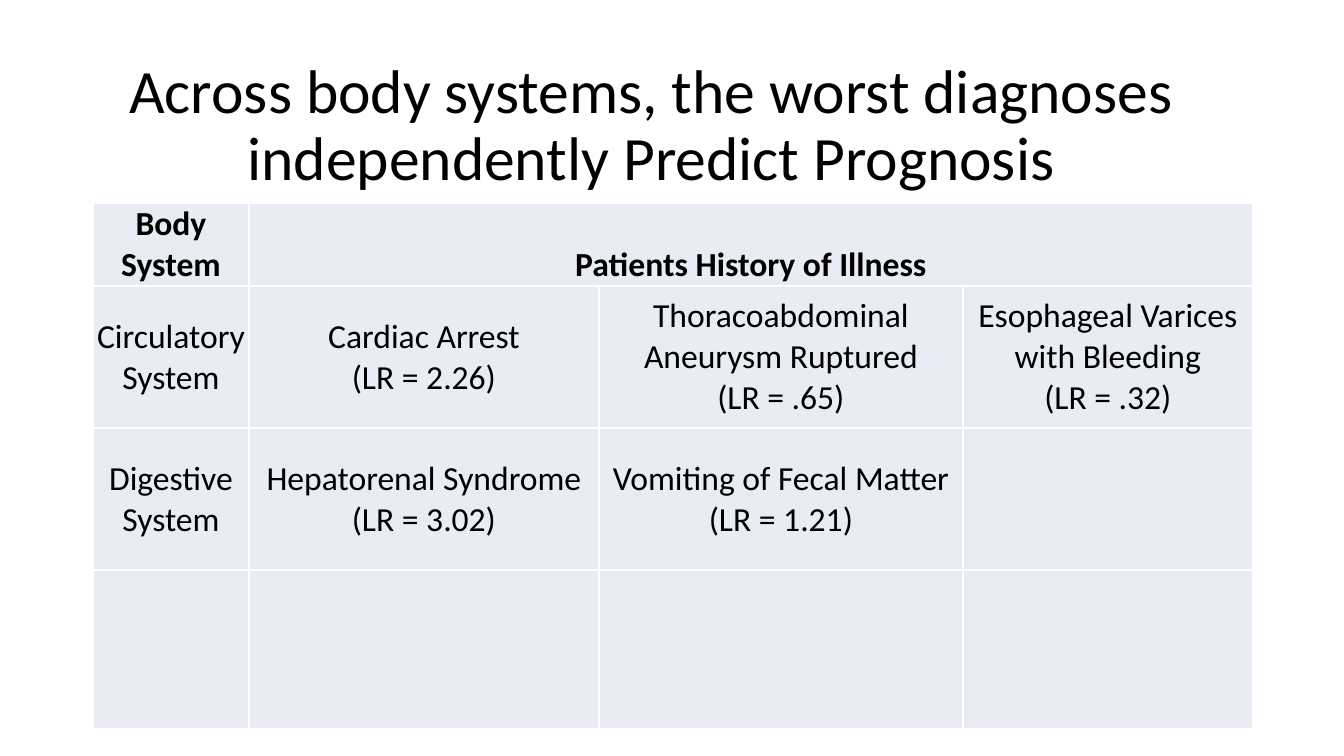
import pptx
import pptx.dml.color
import pptx.enum.text
import pptx.oxml
import pptx.oxml.ns
import pptx.util

TITLE = "Across body systems, the worst diagnoses independently Predict Prognosis"
HEADER = ["Body System", "Patients History of Illness", "", ""]
DIAGNOSES = [
    ["Circulatory System", "Cardiac Arrest\n(LR = 2.26)",
     "Thoracoabdominal Aneurysm Ruptured\n(LR = .65)",
     "Esophageal Varices with Bleeding\n(LR = .32)"],
    ["Digestive System", "Hepatorenal Syndrome\n(LR = 3.02)",
     "Vomiting of Fecal Matter\n(LR = 1.21)", ""],
    ["", "", "", ""],
]
ROWS = [HEADER] + DIAGNOSES

SLIDE_SIZE = (1344, 756)
TITLE_BOX = (72, 54, 1159, 146)
TABLE_LEFT, TABLE_TOP = 93, 203
COL_WIDTHS = [156, 350, 364, 290]
ROW_HEIGHTS = [82, 142, 142, 159]

FONT = "Calibri"
BLACK = pptx.dml.color.RGBColor(0x00, 0x00, 0x00)
WHITE = pptx.dml.color.RGBColor(0xFF, 0xFF, 0xFF)
CELL_FILL = pptx.dml.color.RGBColor(0xE9, 0xEB, 0xF5)
ANCHOR = pptx.enum.text.MSO_ANCHOR
CENTER = pptx.enum.text.PP_ALIGN.CENTER


def px(n):
    """Convert pixels, 100.8 to the inch, to EMU."""
    return pptx.util.Emu(round(n * 914400 / 100.8))


def format_text(tf, size, bold=False):
    for p in tf.paragraphs:
        p.alignment = CENTER
        for r in p.runs:
            r.font.name = FONT
            r.font.size = pptx.util.Pt(size)
            r.font.bold = bold
            r.font.color.rgb = BLACK


def add_borders(cell):
    """Put 1 pt white lines on all four sides, ahead of the cell's fill."""
    tcPr = cell._tc.get_or_add_tcPr()
    for i, side in enumerate(("lnL", "lnR", "lnT", "lnB")):
        ln = pptx.oxml.parse_xml(
            f'<a:{side} {pptx.oxml.ns.nsdecls("a")} w="12700"><a:solidFill>'
            f'<a:srgbClr val="{WHITE}"/></a:solidFill></a:{side}>')
        tcPr.insert(i, ln)


def add_title(slide):
    title = slide.shapes.title
    title.left, title.top, title.width, title.height = map(px, TITLE_BOX)
    tf = title.text_frame
    tf.text = TITLE
    tf.word_wrap = True
    tf.auto_size = pptx.enum.text.MSO_AUTO_SIZE.NONE
    tf.vertical_anchor = ANCHOR.MIDDLE
    tf.paragraphs[0].line_spacing = 0.9
    format_text(tf, 44)


def add_diagnosis_table(slide):
    frame = slide.shapes.add_table(
        len(ROWS), len(COL_WIDTHS), px(TABLE_LEFT), px(TABLE_TOP),
        px(sum(COL_WIDTHS)), px(sum(ROW_HEIGHTS)))
    table = frame.table
    table.first_row = table.horz_banding = False
    for column, width in zip(table.columns, COL_WIDTHS):
        column.width = px(width)
    for row, height in zip(table.rows, ROW_HEIGHTS):
        row.height = px(height)
    for i, texts in enumerate(ROWS):
        is_header = i == 0
        for j, text in enumerate(texts):
            cell = table.cell(i, j)
            cell.text_frame.text = text
            cell.margin_left = cell.margin_right = cell.margin_top = px(1)
            cell.margin_bottom = 0
            cell.vertical_anchor = ANCHOR.BOTTOM if is_header else ANCHOR.MIDDLE
            cell.fill.solid()
            cell.fill.fore_color.rgb = CELL_FILL
            add_borders(cell)
            format_text(cell.text_frame, 24, bold=is_header)
    table.cell(0, 1).merge(table.cell(0, len(COL_WIDTHS) - 1))


def main():
    prs = pptx.Presentation()
    prs.slide_width, prs.slide_height = map(px, SLIDE_SIZE)
    slide = prs.slides.add_slide(prs.slide_layouts[5])
    add_title(slide)
    add_diagnosis_table(slide)
    prs.save("out.pptx")


if __name__ == "__main__":
    main()
